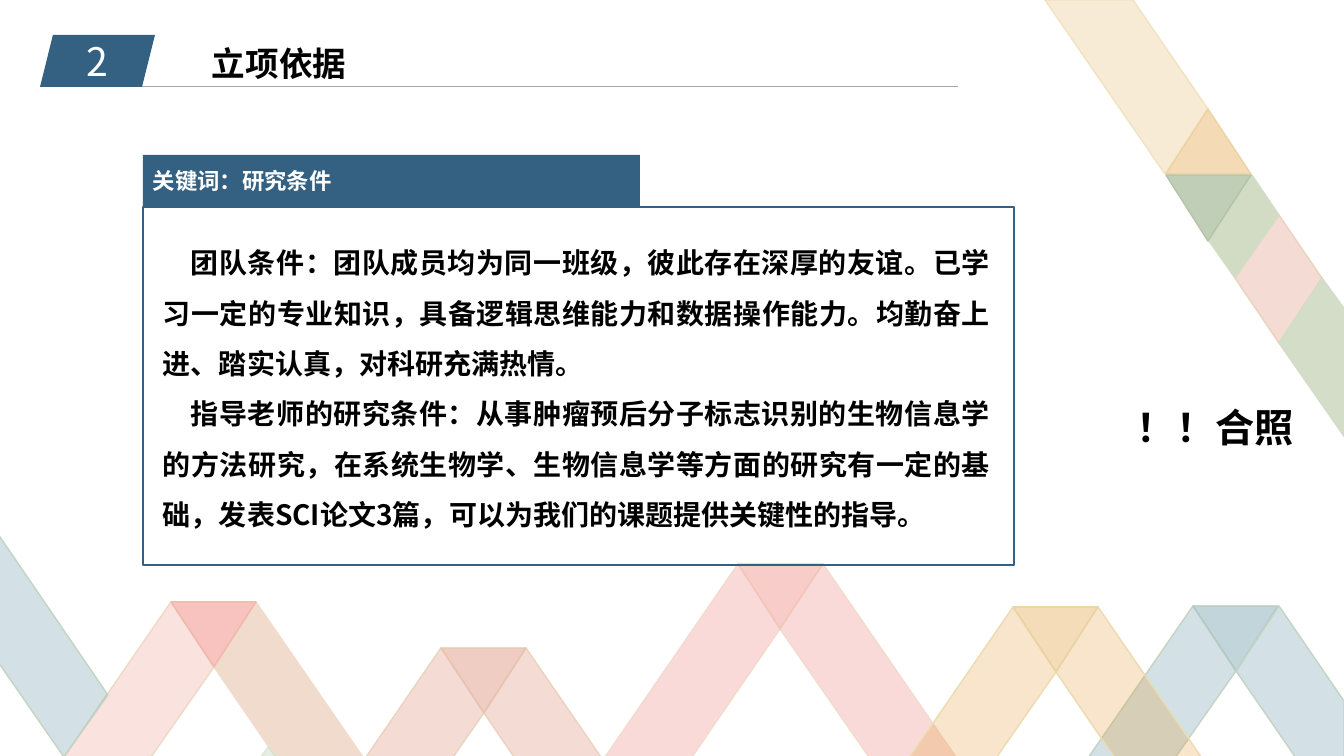
import pptx
import pptx.util
import pptx.dml.color
import pptx.enum.shapes
import pptx.enum.text
import pptx.oxml.ns
import pptx.oxml.xmlchemy

PX = 914400 / 100.8
FONT = "Noto Sans CJK SC"
NAVY, WHITE, BLACK = "346182", "FFFFFF", "000000"
SHAPES = pptx.enum.shapes.MSO_SHAPE
ALIGN = pptx.enum.text.PP_ALIGN
ANCHOR = pptx.enum.text.MSO_ANCHOR

number = "2"
title = "立项依据"
keyword = "关键词：研究条件"
conditions = [
    "团队条件：团队成员均为同一班级，彼此存在深厚的友谊。已学习一定的专业知识，具备逻辑思维能力和数据操作能力。均勤奋上进、踏实认真，对科研充满热情。",
    "指导老师的研究条件：从事肿瘤预后分子标志识别的生物信息学的方法研究，在系统生物学、生物信息学等方面的研究有一定的基础，发表SCI论文3篇，可以为我们的课题提供关键性的指导。",
]
photo_note = "！！合照"

PINK = ("EE8F82", 25, "EED9C6")
SAND = ("F1DBCC", 100, "F1DBCC")
ROSE = ("ED6F65", 25, "F1DBCC")
CLAY = ("D57053", 25, "EAD3BF")
AMBER = ("E49B35", 25, "EBDCB0")
BLUE = ("508799", 25, "C3D4C3")

peaks = [
    (171, 602, 760, PINK, SAND, ("ED5249", 35, "EFBBAB")),
    (738, 564, 760, ROSE, ROSE, ("ED6F65", 35, "F2C7BA")),
    (441, 648, 760, CLAY, CLAY, ("D57053", 35, "E6C6B1")),
    (1193, 606, 758, BLUE, None, ("508799", 35, "B5CAC1")),
    (1013, 607, 761, AMBER, AMBER, ("E49B35", 35, "EBD3A3")),
]
bands = [
    ([(1045, 0), (1133, 0), (1208, 109), (1165, 174)], ("E7B05E", 25, "EFE3C2")),
    ([(1279, 215), (1322, 278), (1279, 343), (1235, 278)], CLAY),
    ([(1252, 175), (1279, 215), (1235, 278), (1209, 241)], ("D2DBC4", 100, "D3DDC7")),
    ([(1322, 278), (1346, 311), (1346, 439), (1279, 343)], ("D3DDC7", 100, "D3DCC6")),
    ([(1208, 109), (1251, 174), (1166, 174)], ("E49B35", 36, "EBD3A2")),
    ([(1208, 241), (1251, 175), (1166, 175)], ("88A378", 53, "B3C4A5")),
    ([(269, 746), (280, 761), (258, 761)], ("A2B894", 25, "E0E6D3")),
    ([(-4, 531), (108, 695), (64, 757), (-4, 659)], BLUE),
    ([(1279, 606), (1344, 701), (1344, 758), (1296, 758), (1236, 671)], BLUE),
]
FOLD_WIDTH, FOLD_HEIGHT, BAND_WIDTH, SLOPE = 85, 65, 87, 0.69


def px(value):
    return pptx.util.Emu(round(value * PX))


def colour(value):
    return pptx.dml.color.RGBColor.from_string(value)


def element(tag):
    return pptx.oxml.xmlchemy.OxmlElement(tag)


def style(shape, fill=None, outline=None, opacity=100):
    shape.shadow.inherit = False
    if fill:
        shape.fill.solid()
        shape.fill.fore_color.rgb = colour(fill)
    else:
        shape.fill.background()
    if outline:
        shape.line.color.rgb = colour(outline)
        shape.line.width = pptx.util.Pt(1)
    else:
        shape.line.fill.background()
    if opacity < 100:
        tint = shape._element.spPr.find(pptx.oxml.ns.qn("a:solidFill"))[0]
        alpha = element("a:alpha")
        alpha.set("val", str(opacity * 1000))
        tint.append(alpha)


def add_band(points, paint):
    fill, opacity, outline = paint
    builder = shapes.build_freeform(*points[0], scale=PX)
    builder.add_line_segments(points[1:], close=True)
    style(builder.convert_to_shape(), fill, outline, opacity)


def add_peak(left, top, floor, left_paint, right_paint, fold_paint):
    right = left + FOLD_WIDTH
    tip = (left + FOLD_WIDTH / 2, top + FOLD_HEIGHT)
    run = SLOPE * (floor - top)
    left_foot, right_foot = left - run, right + run
    add_band([(left, top), tip, (left_foot + BAND_WIDTH, floor), (left_foot, floor)], left_paint)
    if right_paint:
        add_band([(right, top), (right_foot, floor), (right_foot - BAND_WIDTH, floor), tip], right_paint)
    add_band([(left, top), (right, top), tip], fold_paint)


def add_block(kind, box, fill=None, outline=None):
    style(shapes.add_shape(kind, *map(px, box)), fill, outline)


def add_text(box, paragraphs, size, ink=BLACK, bold=True, align=ALIGN.LEFT,
             anchor=ANCHOR.TOP, wrap=True, spacing=None, indent=0):
    frame = shapes.add_textbox(*map(px, box)).text_frame
    frame.word_wrap = wrap
    frame.auto_size = pptx.enum.text.MSO_AUTO_SIZE.SHAPE_TO_FIT_TEXT
    frame.vertical_anchor = anchor
    for index, wording in enumerate(paragraphs):
        paragraph = frame.add_paragraph() if index else frame.paragraphs[0]
        paragraph.alignment = align
        if spacing:
            paragraph.line_spacing = spacing
        if indent:
            paragraph._p.get_or_add_pPr().set("indent", str(px(indent)))
        run = paragraph.add_run()
        run.text = wording
        run.font.size = pptx.util.Pt(size)
        run.font.bold = bold
        run.font.name = FONT
        run.font.color.rgb = colour(ink)
        east_asian = element("a:ea")
        east_asian.set("typeface", FONT)
        run.font._element.find(pptx.oxml.ns.qn("a:latin")).addnext(east_asian)


deck = pptx.Presentation()
deck.slide_width, deck.slide_height = px(1344), px(756)
shapes = deck.slides.add_slide(deck.slide_layouts[6]).shapes

for peak in peaks:
    add_peak(*peak)
for points, paint in bands:
    add_band(points, paint)

rule = shapes.add_connector(pptx.enum.shapes.MSO_CONNECTOR.STRAIGHT, px(88), px(86), px(958), px(86))
rule.line.color.rgb = colour("A6A6A6")
rule.line.width = pptx.util.Pt(0.5)
rule._element.spPr.append(element("a:effectLst"))

add_block(SHAPES.PARALLELOGRAM, (40, 35, 115, 52), NAVY)
add_text((41, 32, 113, 57), [number], 28, WHITE, bold=False, align=ALIGN.CENTER)
add_text((202, 38, 156, 50), [title], 24, wrap=False)

add_block(SHAPES.RECTANGLE, (143, 207, 871, 358), outline=NAVY)
add_block(SHAPES.RECTANGLE, (143, 155, 497, 52), NAVY)
add_text((143, 162, 521, 37), [keyword], 16, WHITE, anchor=ANCHOR.MIDDLE)
add_text((153, 224, 847, 316), conditions, 20, align=ALIGN.JUSTIFY, spacing=1.5, indent=28)
add_text((1127, 398, 197, 57), [photo_note], 28)

deck.save("out.pptx")
